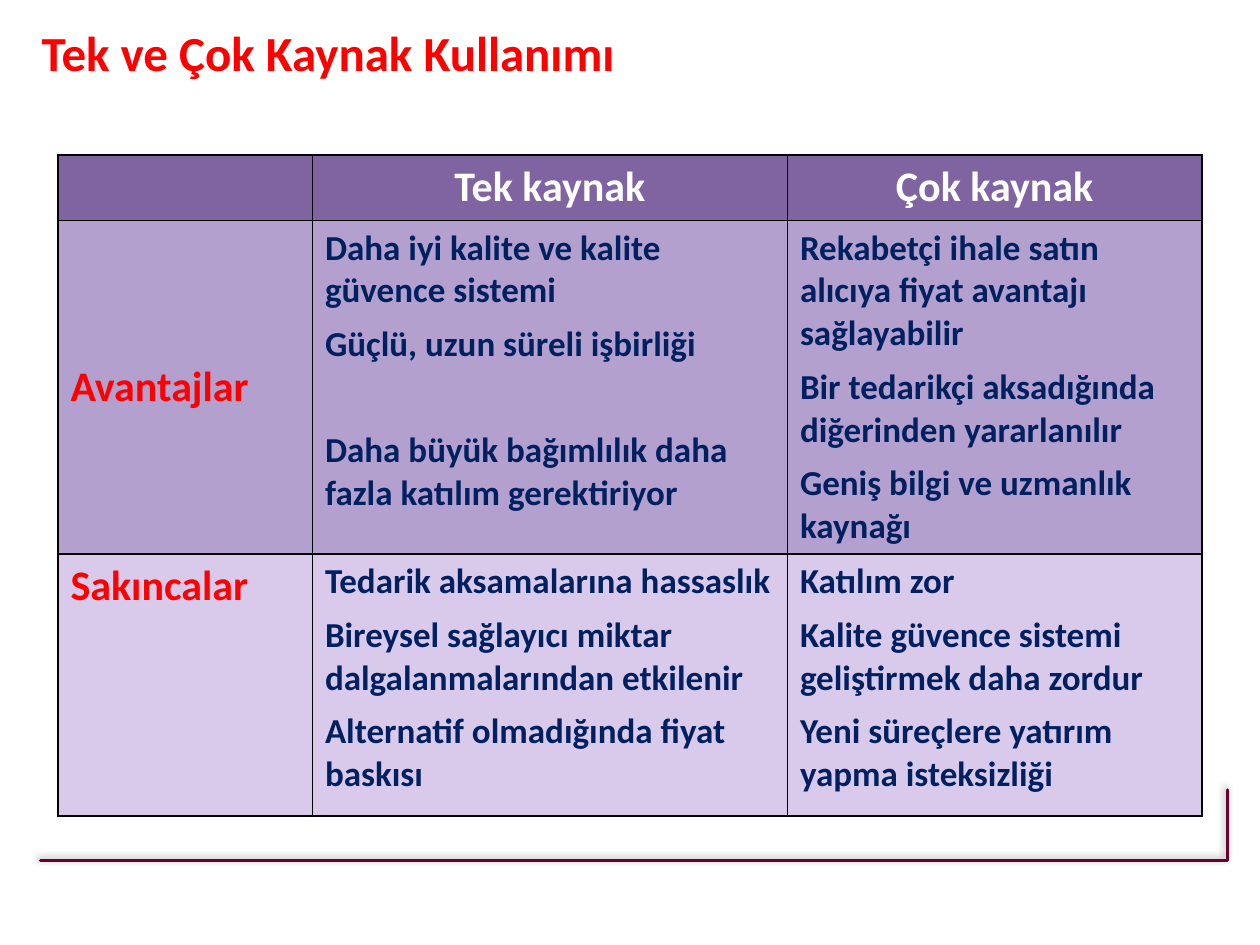
"""Build a slide comparing single and multiple sourcing in a table."""
from lxml.etree import SubElement
from pptx import Presentation
from pptx.dml.color import RGBColor
from pptx.enum.text import MSO_ANCHOR, MSO_AUTO_SIZE, PP_ALIGN
from pptx.oxml import parse_xml
from pptx.oxml.ns import nsdecls, qn
from pptx.util import Inches, Pt


def color(value):
    return RGBColor.from_string(value)


def write(frame, text, size=20, fill="002060", align=PP_ALIGN.LEFT, before=0, after=0, first=True):
    paragraph = frame.paragraphs[0] if first else frame.add_paragraph()
    paragraph.alignment = align
    paragraph.space_before, paragraph.space_after = Pt(before), Pt(after)
    span = paragraph.add_run()
    span.text = text
    span.font.name, span.font.size, span.font.bold = "Calibri", Pt(size), True
    span.font.color.rgb = color(fill)


deck = Presentation()
deck.slide_width, deck.slide_height = Inches(10), Inches(7.5)
page = deck.slides.add_slide(deck.slide_layouts[5])

outline = page.shapes.build_freeform(Inches(0.32), Inches(6.83))
outline.add_line_segments(
    [(Inches(9.74), Inches(6.83)), (Inches(9.74), Inches(6.27))], close=False
)
corner = outline.convert_to_shape()
corner.fill.background()
corner.line.color.rgb = color("6A002D")
corner.line.width = Pt(1.75)
corner.line._get_or_add_ln().set("cap", "rnd")
corner.shadow.inherit = False
effects = corner.element.spPr.find(qn("a:effectLst"))
shadow = SubElement(effects, qn("a:outerShdw"), blurRad=str(Pt(4)), dist=str(Pt(3)),
                    dir="13500000", algn="br", rotWithShape="0")
shade = SubElement(shadow, qn("a:srgbClr"), val="000000")
SubElement(shade, qn("a:alpha"), val="40000")

title = page.shapes.title
title.left, title.top = Inches(0.23), Inches(0.13)
title.width, title.height = Inches(9.77), Inches(0.64)
title.text_frame.auto_size = MSO_AUTO_SIZE.NONE
title.text_frame.vertical_anchor = MSO_ANCHOR.TOP
write(title.text_frame, "Tek ve Çok Kaynak Kullanımı", size=28, fill="FF0000")

rows = [
    ("8064A2", 0.52, "", ["Tek kaynak"], ["Çok kaynak"]),
    ("B3A0CF", 2.6, "Avantajlar",
     ["Daha iyi kalite ve kalite güvence sistemi",
      "Güçlü, uzun süreli işbirliği",
      "Daha büyük bağımlılık daha fazla katılım gerektiriyor"],
     ["Rekabetçi ihale satın alıcıya fiyat avantajı sağlayabilir",
      "Bir tedarikçi aksadığında diğerinden yararlanılır",
      "Geniş bilgi ve uzmanlık kaynağı"]),
    ("D9CAEC", 2.08, "Sakıncalar",
     ["Tedarik aksamalarına hassaslık",
      "Bireysel sağlayıcı miktar dalgalanmalarından etkilenir",
      "Alternatif olmadığında fiyat baskısı"],
     ["Katılım zor",
      "Kalite güvence sistemi geliştirmek daha zordur",
      "Yeni süreçlere yatırım yapma isteksizliği"]),
]
table = page.shapes.add_table(
    3, 3, Inches(0.46), Inches(1.23), Inches(9.08), Inches(5.2)
).table
for column, width in zip(table.columns, (2.02, 3.77, 3.29)):
    column.width = Inches(width)

for row_index, (background, height, label, single, multiple) in enumerate(rows):
    table.rows[row_index].height = Inches(height)
    for column_index, lines in enumerate(([label], single, multiple)):
        cell = table.cell(row_index, column_index)
        cell.fill.solid()
        cell.fill.fore_color.rgb = color(background)
        for position, side in enumerate(("lnL", "lnR", "lnT", "lnB")):
            border = parse_xml(
                f'<a:{side} {nsdecls("a")} w="{Pt(1)}"><a:solidFill>'
                f'<a:srgbClr val="000000"/></a:solidFill></a:{side}>'
            )
            cell._tc.get_or_add_tcPr().insert(position, border)
        if column_index == 0:
            if label:
                write(cell.text_frame, label, size=24, fill="FF0000")
        elif row_index == 0:
            write(cell.text_frame, lines[0], size=24, fill="FFFFFF", align=PP_ALIGN.CENTER)
        else:
            for index, line in enumerate(lines):
                extra = 30 if (row_index, column_index, index) == (1, 1, 2) else 0
                write(cell.text_frame, line, before=3 + extra if index else 0,
                      after=3, first=index == 0)
table.cell(1, 0).vertical_anchor = MSO_ANCHOR.MIDDLE

deck.save("out.pptx")
